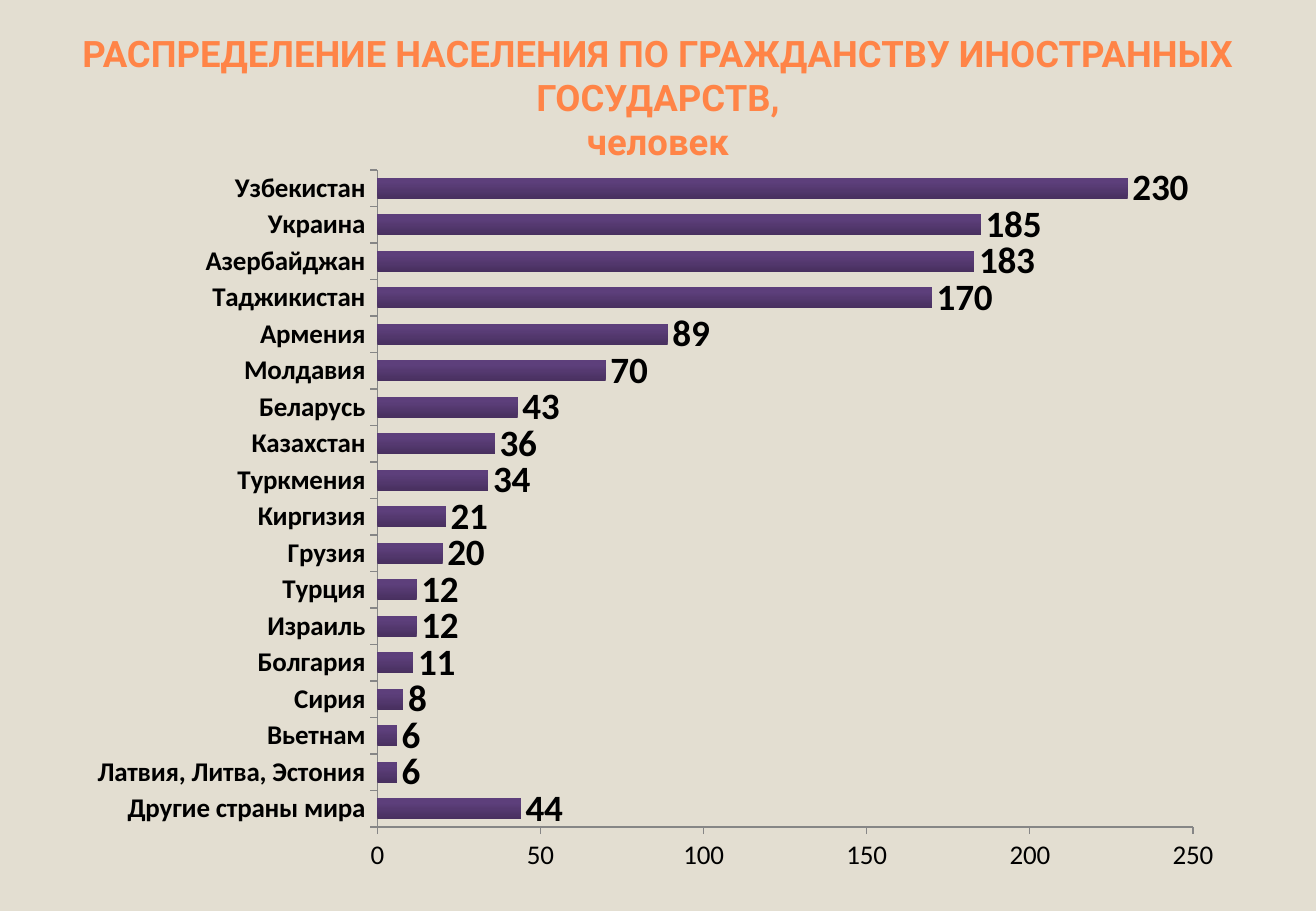
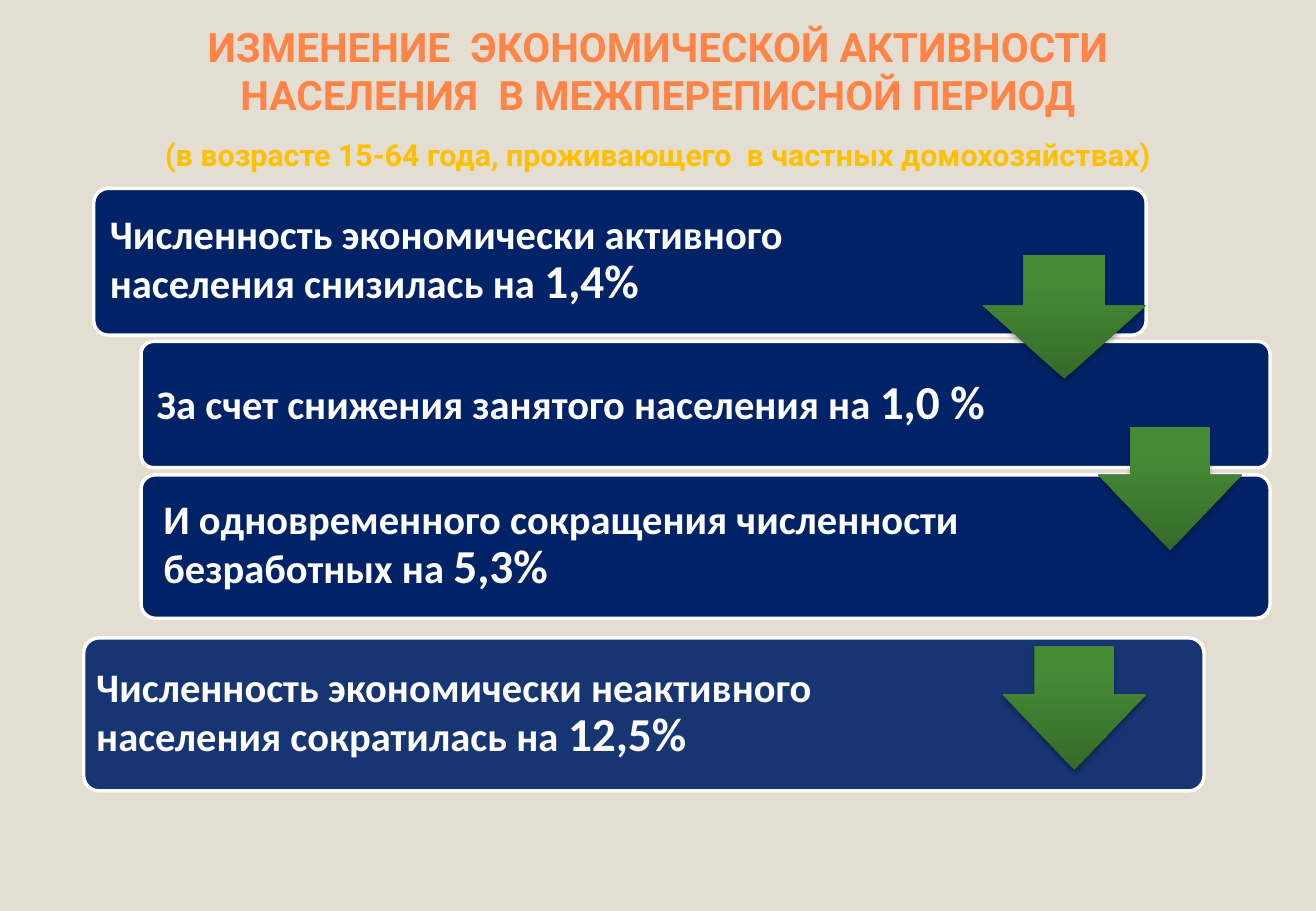
from lxml.etree import SubElement
from pptx import Presentation
from pptx.chart.data import CategoryChartData
from pptx.dml.color import RGBColor
from pptx.enum.chart import XL_CHART_TYPE, XL_LABEL_POSITION, XL_TICK_MARK
from pptx.enum.shapes import MSO_SHAPE
from pptx.enum.text import MSO_ANCHOR, PP_ALIGN
from pptx.oxml import parse_xml
from pptx.oxml.ns import nsdecls, qn
from pptx.util import Cm, Pt

CITIZENSHIP = [
    ("Другие страны мира", 44), ("Латвия, Литва, Эстония", 6), ("Вьетнам", 6),
    ("Сирия", 8), ("Болгария", 11), ("Израиль", 12), ("Турция", 12),
    ("Грузия", 20), ("Киргизия", 21), ("Туркмения", 34), ("Казахстан", 36),
    ("Беларусь", 43), ("Молдавия", 70), ("Армения", 89), ("Таджикистан", 170),
    ("Азербайджан", 183), ("Украина", 185), ("Узбекистан", 230),
]

PANELS = [
    ((1.96, 3.94, 22, 3.07), 0.25, 100,
     "Численность экономически активного населения снизилась на ", "1,4%"),
    ((2.95, 7.14, 23.6, 2.64), 0.25, 100,
     "За счет снижения занятого населения на ", "1,0 %"),
    ((2.95, 9.93, 23.6, 3), 0.38, 100,
     "И одновременного сокращения численности безработных на ", "5,3%"),
    ((1.75, 13.34, 23.42, 3.2), 0.17, 90,
     "Численность экономически неактивного населения сократилась на ", "12,5%"),
]

ARROWS = [
    ((20.55, 5.33, 3.4, 2.59), (0.5, 0.59)),
    ((22.96, 8.92, 3, 2.59), (0.55, 0.61)),
    ((20.96, 13.51, 3, 2.59), (0.55, 0.61)),
]


def rgb(value):
    """Turn a hex string into a colour."""
    return RGBColor.from_string(value)


def set_font(font, size, bold=False, color="000000", name="Calibri"):
    """Set size, weight, colour and typeface of a font."""
    font.size, font.bold, font.name = Pt(size), bold, name
    font.color.rgb = rgb(color)


def add_text(p, text, **fmt):
    """Add a formatted run to a paragraph."""
    r = p.add_run()
    r.text = text
    set_font(r.font, **fmt)


def set_gradient(fill, dark, light):
    """Fill from dark at the bottom to light near the top."""
    fill.gradient()
    fill.gradient_angle = 90
    for stop, color, position in zip(fill.gradient_stops, (dark, light), (0, 0.8)):
        stop.color.rgb = rgb(color)
        stop.position = position


class Deck:
    """Hold the shared style and the current slide."""

    WIDTH, HEIGHT = 27.51, 19.05
    BACKGROUND, ACCENT, SUBTITLE = "E3DED1", "FF8447", "FFC000"
    NAVY, WHITE, AXIS = "002368", "FFFFFF", "868686"

    def __init__(self):
        """Start an empty presentation."""
        self.prs = Presentation()
        self.prs.slide_width, self.prs.slide_height = Cm(self.WIDTH), Cm(self.HEIGHT)

    def new_slide(self):
        """Add a blank slide with the shared background."""
        self.s = self.prs.slides.add_slide(self.prs.slide_layouts[6])
        self.s.background.fill.solid()
        self.s.background.fill.fore_color.rgb = rgb(self.BACKGROUND)

    def title(self, lines, size, left=0, subtitle=None):
        """Add a centred title with an optional subtitle."""
        box = self.s.shapes.add_textbox(Cm(left), Cm(0.53), Cm(self.WIDTH - 2 * left), Cm(3))
        tf = box.text_frame
        tf.word_wrap, tf.vertical_anchor = True, MSO_ANCHOR.MIDDLE
        rows = [(line, size, self.ACCENT, 0) for line in lines]
        if subtitle:
            rows.append((subtitle, 18, self.SUBTITLE, 10))
        for i, (text, points, color, gap) in enumerate(rows):
            p = tf.add_paragraph() if i else tf.paragraphs[0]
            p.alignment, p.space_before = PP_ALIGN.CENTER, Pt(gap)
            add_text(p, text, size=points, bold=True, color=color, name="Roboto")

    def shape(self, kind, box, adjustments):
        """Add a preset shape without a shadow."""
        sp = self.s.shapes.add_shape(kind, *map(Cm, box))
        sp.shadow.inherit = False
        for i, value in enumerate(adjustments):
            sp.adjustments[i] = value
        return sp

    def panel(self, box, inset, opacity, text, figure):
        """Add a rounded panel whose text ends in a larger figure."""
        sp = self.shape(MSO_SHAPE.ROUNDED_RECTANGLE, box, [0.1])
        sp.fill.solid()
        sp.fill.fore_color.rgb = rgb(self.NAVY)
        if opacity < 100:
            color = sp._element.spPr.find(".//" + qn("a:srgbClr"))
            SubElement(color, qn("a:alpha"), val=str(opacity * 1000))
        sp.line.color.rgb, sp.line.width = rgb(self.WHITE), Pt(2)
        tf = sp.text_frame
        tf.word_wrap, tf.vertical_anchor = True, MSO_ANCHOR.MIDDLE
        tf.margin_left, tf.margin_right = Cm(inset), Cm(5)
        p = tf.paragraphs[0]
        p.alignment, p.line_spacing = PP_ALIGN.LEFT, 0.9
        for part, size in ((text, 24), (figure, 28)):
            add_text(p, part, size=size, bold=True, color=self.WHITE)

    def arrow(self, box, adjustments):
        """Add a green down arrow with a soft shadow."""
        sp = self.shape(MSO_SHAPE.DOWN_ARROW, box, adjustments)
        set_gradient(sp.fill, "356B2A", "458B36")
        sp.line.fill.background()
        effects = sp._element.spPr.find(qn("a:effectLst"))
        shadow = SubElement(effects, qn("a:outerShdw"), blurRad="40000",
                            dist="23000", dir="5400000", rotWithShape="0")
        color = SubElement(shadow, qn("a:srgbClr"), val="000000")
        SubElement(color, qn("a:alpha"), val="35000")

    def bar_chart(self, box, rows, plot):
        """Add a bar chart with value labels and a fixed plot area."""
        data = CategoryChartData()
        data.categories = [name for name, _ in rows]
        data.add_series("Series 1", [value for _, value in rows])
        chart = self.s.shapes.add_chart(
            XL_CHART_TYPE.BAR_CLUSTERED, *map(Cm, box), data).chart
        chart.has_legend = chart.has_title = False
        set_font(chart.font, 10)
        for axis, bold in ((chart.category_axis, True), (chart.value_axis, False)):
            axis.has_major_gridlines = False
            axis.major_tick_mark = XL_TICK_MARK.OUTSIDE
            axis.format.line.color.rgb = rgb(self.AXIS)
            set_font(axis.tick_labels.font, 16, bold)
        axis = chart.value_axis
        axis.minimum_scale, axis.maximum_scale, axis.major_unit = 0, 250, 50
        bars = chart.plots[0]
        bars.gap_width, bars.vary_by_categories = 73, False
        set_gradient(bars.series[0].format.fill, "48305F", "5D3F7B")
        bars.has_data_labels = True
        labels = bars.data_labels
        labels.show_value, labels.position = True, XL_LABEL_POSITION.OUTSIDE_END
        set_font(labels.font, 22, True)
        area = chart._chartSpace.chart.plotArea
        for old in area.findall(qn("c:layout")):
            area.remove(old)
        layout = parse_xml(f"<c:layout {nsdecls('c')}><c:manualLayout/></c:layout>")
        settings = [("layoutTarget", "inner"), ("xMode", "edge"), ("yMode", "edge")]
        for tag, value in settings + list(zip("xywh", plot)):
            SubElement(layout[0], qn("c:" + tag), val=str(value))
        area.insert(0, layout)


def main():
    """Build and save both slides."""
    deck = Deck()

    deck.new_slide()
    deck.title(["РАСПРЕДЕЛЕНИЕ НАСЕЛЕНИЯ ПО ГРАЖДАНСТВУ ИНОСТРАННЫХ ГОСУДАРСТВ,",
                "человек"], 21.6, left=0.97)
    deck.bar_chart((0.97, 3.25, 24.71, 15.27), CITIZENSHIP, (0.28, 0.02, 0.69, 0.9))

    deck.new_slide()
    deck.title(["ИЗМЕНЕНИЕ  ЭКОНОМИЧЕСКОЙ АКТИВНОСТИ",
                "НАСЕЛЕНИЯ  В МЕЖПЕРЕПИСНОЙ ПЕРИОД"], 24,
               subtitle="(в возрасте 15-64 года, проживающего  в частных домохозяйствах)")
    for panel in PANELS:
        deck.panel(*panel)
    for arrow in ARROWS:
        deck.arrow(*arrow)

    deck.prs.save("out.pptx")


if __name__ == "__main__":
    main()
